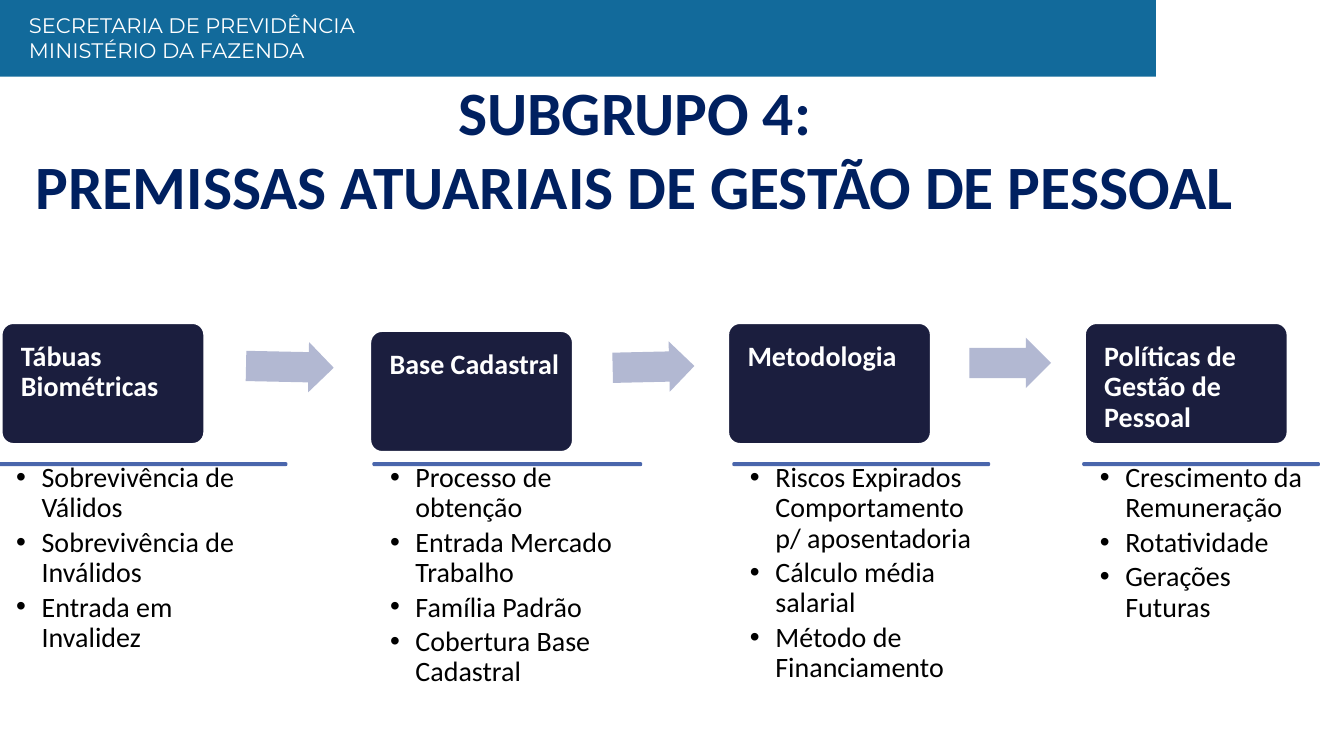
from dataclasses import dataclass
from typing import Optional

from lxml.etree import SubElement
from pptx import Presentation
from pptx.dml.color import RGBColor as RGB
from pptx.enum.shapes import MSO_SHAPE as Shape
from pptx.enum.text import MSO_ANCHOR as Anchor, PP_ALIGN as Align
from pptx.oxml.ns import qn
from pptx.util import Cm, Pt


@dataclass(frozen=True)
class Theme:
    white: RGB = RGB(0xFF, 0xFF, 0xFF)
    black: RGB = RGB(0x00, 0x00, 0x00)
    banner: RGB = RGB(0x12, 0x6A, 0x9B)
    title: RGB = RGB(0x00, 0x20, 0x60)
    card: RGB = RGB(0x1B, 0x1E, 0x3E)
    rule: RGB = RGB(0x4A, 0x66, 0xAC)
    arrow: RGB = RGB(0xB2, 0xB8, 0xD2)
    body_font: str = "Calibri"
    banner_font: str = "Montserrat"
    banner_size: float = 15
    title_size: float = 44
    body_size: float = 20
    line_width: float = 2


@dataclass(frozen=True)
class Box:
    left: float
    top: float
    width: float
    height: float


@dataclass(frozen=True)
class TextStyle:
    size: float
    color: RGB
    font: str = "Calibri"
    bold: bool = False
    align: Align = Align.LEFT
    line_spacing: Optional[float] = None
    space_after: float = 0
    bullet: bool = False


@dataclass(frozen=True)
class Topic:
    heading: str
    card_left: float
    card_top: float
    rule_left: float
    rule_width: float
    items: tuple[str, ...]


@dataclass(frozen=True)
class Arrow:
    box: Box
    rotation: float


THEME = Theme()
BANNER = TextStyle(THEME.banner_size, THEME.white, THEME.banner_font)
TITLE = TextStyle(THEME.title_size, THEME.title, THEME.body_font, True, Align.CENTER)
HEADING = TextStyle(THEME.body_size, THEME.white, THEME.body_font, True, line_spacing=0.9)
ITEM = TextStyle(THEME.body_size, THEME.black, THEME.body_font,
                 line_spacing=0.9, space_after=3, bullet=True)
CARD_WIDTH, CARD_HEIGHT = 5.13, 3.07
RULE_TOP, RULE_HEIGHT = 11.68, 0.03
LIST_HEIGHT = 6
DEFAULT_INSETS = (0.25, 0.13, 0.25, 0.13)
CARD_INSETS = (0.41, 0.41, 0.25, 0.2)
LIST_INSETS = (0.41, 0, 0.25, 0)

TOPICS = (
    Topic("Tábuas Biométricas", 0.03, 8.13, 0, 7.21,
          ("Sobrevivência de Válidos", "Sobrevivência de Inválidos", "Entrada em Invalidez")),
    Topic("Base Cadastral", 9.32, 8.33, 9.42, 6.73,
          ("Processo de obtenção", "Entrada Mercado Trabalho", "Família Padrão",
           "Cobertura Base Cadastral")),
    Topic("Metodologia", 18.34, 8.13, 18.49, 6.43,
          ("Riscos Expirados Comportamento p/ aposentadoria", "Cálculo média salarial",
           "Método de Financiamento")),
    Topic("Políticas de Gestão de Pessoal", 27.33, 8.13, 27.31, 5.92,
          ("Crescimento da Remuneração", "Rotatividade", "Gerações Futuras")),
)
ARROWS = (
    Arrow(Box(6.2, 8.61, 2.21, 1.27), 1.2),
    Arrow(Box(15.44, 8.61, 2.06, 1.27), -1.3),
    Arrow(Box(24.43, 8.51, 2.06, 1.27), 0),
)


def place(box: Box) -> tuple[Cm, Cm, Cm, Cm]:
    return Cm(box.left), Cm(box.top), Cm(box.width), Cm(box.height)


def add_bullet(p) -> None:
    pPr = p._p.get_or_add_pPr()
    pPr.set("marL", str(Cm(0.64)))
    pPr.set("indent", str(-Cm(0.64)))
    SubElement(pPr, qn("a:buFont")).set("typeface", "Arial")
    SubElement(pPr, qn("a:buChar")).set("char", "•")


def write(sp, lines: tuple[str, ...], style: TextStyle,
          insets: tuple[float, ...] = DEFAULT_INSETS) -> None:
    tf = sp.text_frame
    tf.word_wrap = True
    tf.vertical_anchor = Anchor.TOP
    tf.margin_left, tf.margin_top, tf.margin_right, tf.margin_bottom = map(Cm, insets)
    for i, line in enumerate(lines):
        p = tf.add_paragraph() if i else tf.paragraphs[0]
        if style.bullet:
            add_bullet(p)
        p.alignment = style.align
        p.space_after = Pt(style.space_after)
        if style.line_spacing:
            p.line_spacing = style.line_spacing
        r = p.add_run()
        r.text = line
        r.font.name = style.font
        r.font.size = Pt(style.size)
        r.font.bold = style.bold
        r.font.color.rgb = style.color


def add_text(s, box: Box, lines: tuple[str, ...], style: TextStyle,
             insets: tuple[float, ...] = DEFAULT_INSETS) -> None:
    write(s.shapes.add_textbox(*place(box)), lines, style, insets)


def add_shape(s, kind: Shape, box: Box, fill: RGB, line: Optional[RGB] = None,
              adjustments: tuple[float, ...] = ()):
    sp = s.shapes.add_shape(kind, *place(box))
    sp.shadow.inherit = False
    sp.fill.solid()
    sp.fill.fore_color.rgb = fill
    if line is None:
        sp.line.fill.background()
    else:
        sp.line.color.rgb = line
        sp.line.width = Pt(THEME.line_width)
    for i, value in enumerate(adjustments):
        sp.adjustments[i] = value
    return sp


def add_topic(s, topic: Topic) -> None:
    card = add_shape(s, Shape.ROUNDED_RECTANGLE,
                     Box(topic.card_left, topic.card_top, CARD_WIDTH, CARD_HEIGHT),
                     THEME.card, THEME.white, (0.1,))
    write(card, (topic.heading,), HEADING, CARD_INSETS)
    add_shape(s, Shape.ROUNDED_RECTANGLE,
              Box(topic.rule_left, RULE_TOP, topic.rule_width, RULE_HEIGHT),
              THEME.white, THEME.rule, (0.1,))
    add_text(s, Box(topic.rule_left, RULE_TOP, topic.rule_width, LIST_HEIGHT),
             topic.items, ITEM, LIST_INSETS)


def add_arrow(s, arrow: Arrow) -> None:
    sp = add_shape(s, Shape.RIGHT_ARROW, arrow.box, THEME.arrow, adjustments=(0.6, 0.5))
    sp.rotation = arrow.rotation


def main() -> None:
    prs = Presentation()
    prs.slide_width, prs.slide_height = Cm(33.87), Cm(19.05)
    s = prs.slides.add_slide(prs.slide_layouts[6])
    add_shape(s, Shape.RECTANGLE, Box(0, 0, 29.13, 1.93), THEME.banner)
    add_text(s, Box(0.48, 0.18, 19.46, 1.55),
             ("SECRETARIA DE PREVIDÊNCIA", "MINISTÉRIO DA FAZENDA"), BANNER)
    add_text(s, Box(0.1, 1.73, 31.8, 4.88),
             ("SUBGRUPO 4:", "PREMISSAS ATUARIAIS DE GESTÃO DE PESSOAL"), TITLE)
    for topic in TOPICS:
        add_topic(s, topic)
    for arrow in ARROWS:
        add_arrow(s, arrow)
    prs.save("out.pptx")


if __name__ == "__main__":
    main()
